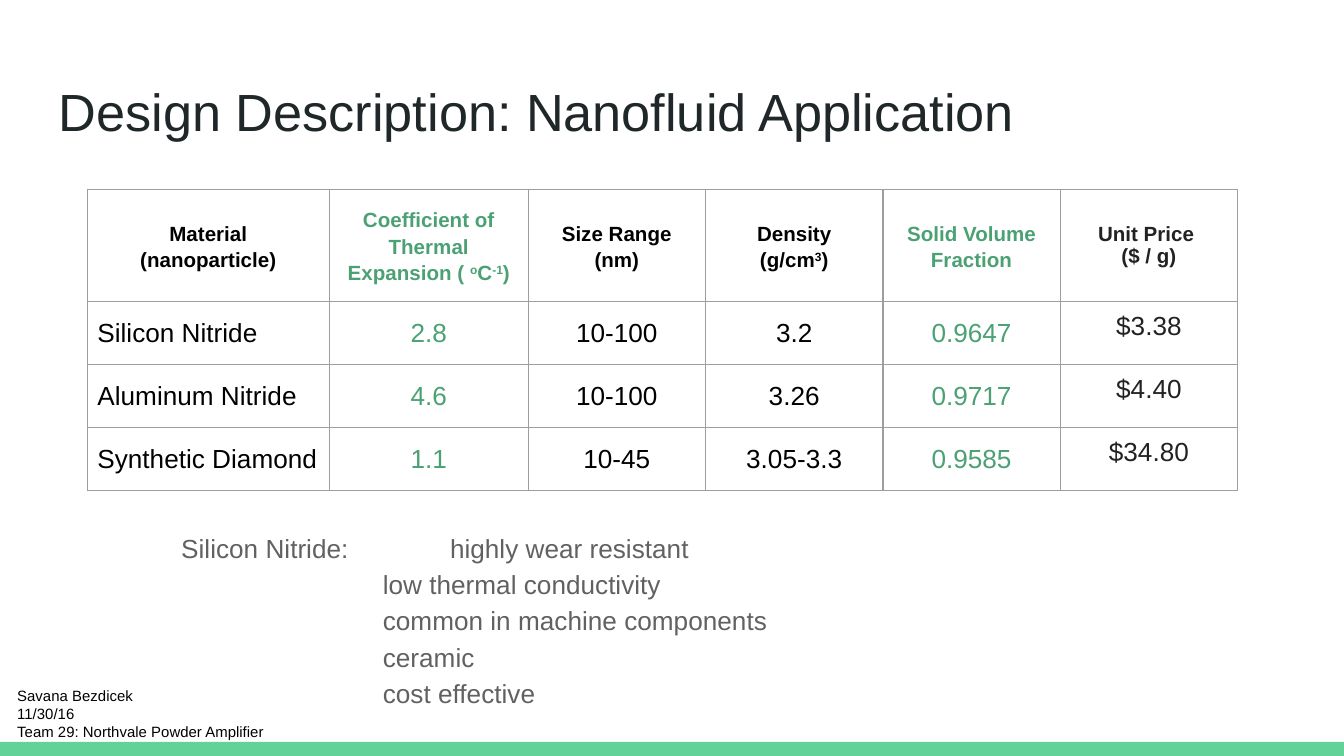
import pptx
import pptx.util
import pptx.dml.color
import pptx.enum.shapes
import pptx.enum.text
import pptx.oxml
import pptx.oxml.ns

COLS = 1000
WIDTH = pptx.util.Inches(10)
HEIGHT = WIDTH * 9 // 16
UNIT = WIDTH // COLS
FONT = "Arial"
COLORS = {
    "bar": "63D297", "title": "202729", "accent": "4BA173", "ink": "000000",
    "price": "222222", "notes": "616161", "border": "9E9E9E",
}
ALIGN = pptx.enum.text.PP_ALIGN
ANCHOR = pptx.enum.text.MSO_ANCHOR

COLUMN_WIDTHS = [180, 148, 132, 132, 132, 132]
COLUMN_COLORS = ["ink", "accent", "ink", "ink", "accent", "price"]
ROW_HEIGHT = 42
HEADER = [
    "Material\n(nanoparticle)",
    "Coefficient of Thermal Expansion ( ^o^C^-1^)",
    "Size Range\n(nm)",
    "Density\n(g/cm^3^)",
    "Solid Volume Fraction",
    "Unit Price \n($ / g)",
]
MATERIALS = [
    ["Silicon Nitride", "2.8", "10-100", "3.2", "0.9647", "$3.38"],
    ["Aluminum Nitride", "4.6", "10-100", "3.26", "0.9717", "$4.40"],
    ["Synthetic Diamond", "1.1", "10-45", "3.05-3.3", "0.9585", "$34.80"],
]
NOTES = [
    "Silicon Nitride: \thighly wear resistant",
    "low thermal conductivity",
    "common in machine components",
    "ceramic",
    "cost effective",
]
FOOTER = ["Savana Bezdicek", "11/30/16", "Team 29: Northvale Powder Amplifier"]


def grid(*lengths):
    return [int(n * UNIT) for n in lengths]


def rgb(name):
    return pptx.dml.color.RGBColor.from_string(COLORS[name])


def write_lines(tf, lines, size, color, bold=False, align=ALIGN.LEFT, spacing=1.0):
    for i, line in enumerate(lines):
        p = tf.paragraphs[0] if i == 0 else tf.add_paragraph()
        p.alignment = align
        p.line_spacing = spacing
        p.font.name, p.font.size, p.font.bold = FONT, pptx.util.Pt(size), bold
        p.font.color.rgb = rgb(color)
        for j, part in enumerate(line.split("^")):
            r = p.add_run()
            r.text = part
            if j % 2:
                r._r.get_or_add_rPr().set("baseline", "30000")


def add_text(slide, box, lines, size, color, spacing=1.0):
    sp = slide.shapes.add_textbox(*grid(*box))
    tf = sp.text_frame
    tf.word_wrap = True
    tf.margin_left, tf.margin_top, tf.margin_right, tf.margin_bottom = grid(10, 10, 10, 10)
    write_lines(tf, lines, size, color, spacing=spacing)
    return tf


def add_bar(slide, box):
    sp = slide.shapes.add_shape(pptx.enum.shapes.MSO_SHAPE.RECTANGLE, *grid(*box))
    sp.shadow.inherit = False
    sp.fill.solid()
    sp.fill.fore_color.rgb = rgb("bar")
    sp.line.fill.background()


def add_borders(cell):
    tcPr = cell._tc.get_or_add_tcPr()
    for i, side in enumerate(("lnL", "lnR", "lnT", "lnB")):
        tcPr.insert(i, pptx.oxml.parse_xml(
            f'<a:{side} {pptx.oxml.ns.nsdecls("a")} w="{pptx.util.Pt(0.75)}">'
            f'<a:solidFill><a:srgbClr val="{COLORS["border"]}"/></a:solidFill></a:{side}>'))


def add_materials_table(slide, box):
    rows = [HEADER] + MATERIALS
    table = slide.shapes.add_table(len(rows), len(HEADER), *grid(*box)).table
    table.first_row = table.horz_banding = False
    for column, width in zip(table.columns, COLUMN_WIDTHS):
        column.width = width * UNIT
    for i, values in enumerate(rows):
        is_header = i == 0
        table.rows[i].height = ROW_HEIGHT * UNIT
        for j, value in enumerate(values):
            cell = table.cell(i, j)
            is_price = j == len(values) - 1
            side = pptx.util.Pt(5.4)
            cell.fill.background()
            cell.margin_left = cell.margin_right = side
            cell.margin_top = cell.margin_bottom = side if is_price else 10 * UNIT
            cell.vertical_anchor = ANCHOR.MIDDLE if is_header else ANCHOR.TOP
            write_lines(
                cell.text_frame, value.split("\n"), 11 if is_header else 14,
                COLUMN_COLORS[j], is_header,
                ALIGN.CENTER if is_header or j else ALIGN.LEFT,
                1.0 if is_price else 1.15)
            add_borders(cell)


def add_notes_list(slide, box):
    tf = add_text(slide, box, NOTES, 14, "notes", spacing=1.15)
    first, *rest = [p._p.get_or_add_pPr() for p in tf.paragraphs]
    first.insert(1, pptx.oxml.parse_xml(
        f'<a:tabLst {pptx.oxml.ns.nsdecls("a")}>'
        f'<a:tab pos="{200 * UNIT}" algn="l"/></a:tabLst>'))
    for pPr in rest:
        pPr.set("marL", str(100 * UNIT))
        pPr.set("indent", str(50 * UNIT))


def main():
    prs = pptx.Presentation()
    prs.slide_width, prs.slide_height = WIDTH, HEIGHT
    slide = prs.slides.add_slide(prs.slide_layouts[6])
    add_bar(slide, (0, 552, COLS, 11))
    add_text(slide, (34, 49, 932, 63), ["Design Description: Nanofluid Application"],
             28, "title")
    add_materials_table(
        slide, (65, 141, sum(COLUMN_WIDTHS), ROW_HEIGHT * (len(MATERIALS) + 1)))
    add_notes_list(slide, (125, 383, 461, 150))
    add_text(slide, (3, 501, 266, 61), FOOTER, 8, "ink")
    prs.save("out.pptx")


if __name__ == "__main__":
    main()
